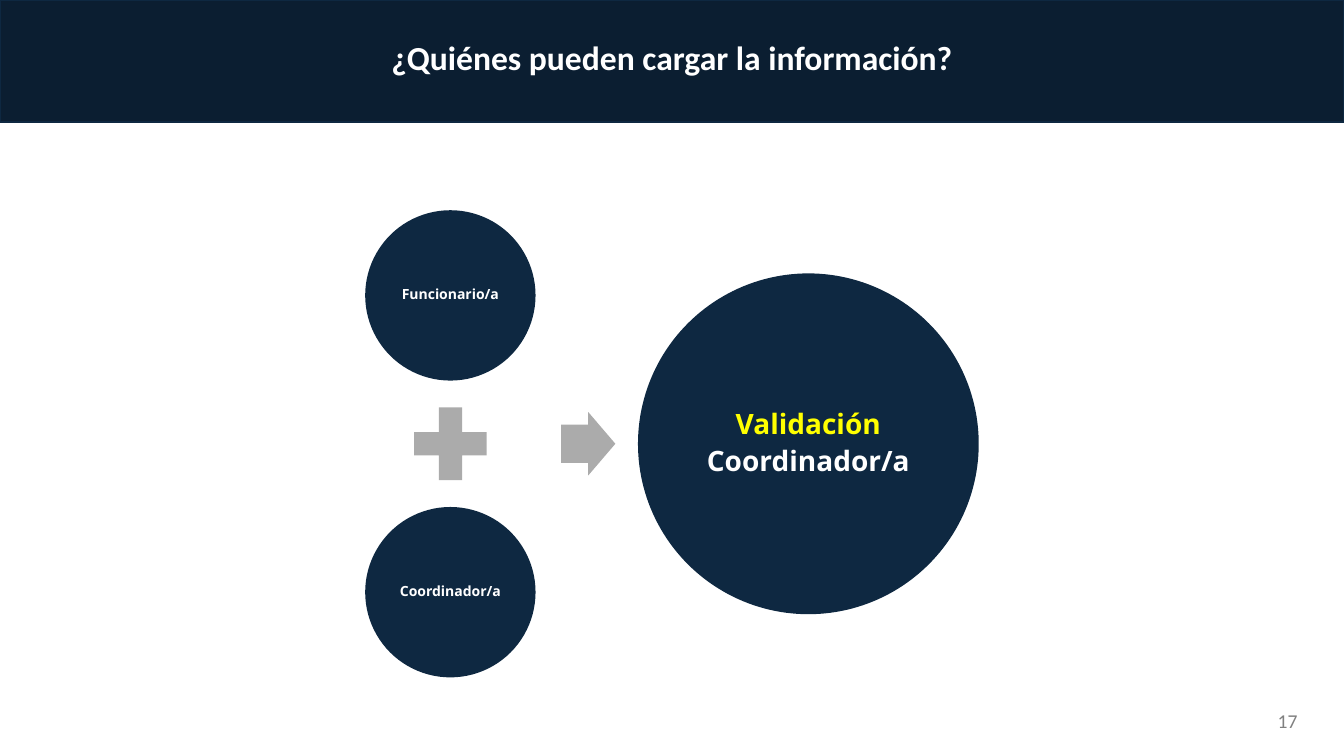
from pptx import Presentation
from pptx.dml.color import RGBColor
from pptx.enum.shapes import MSO_SHAPE
from pptx.enum.text import MSO_ANCHOR, PP_ALIGN
from pptx.util import Pt

NAVY = RGBColor(0x0E, 0x28, 0x41)
DARK_NAVY = RGBColor(0x0B, 0x1E, 0x31)
SILVER = RGBColor(0xAB, 0xAB, 0xAB)
GRAY = RGBColor(0x80, 0x80, 0x80)
YELLOW = RGBColor(0xFF, 0xFF, 0x00)
WHITE = RGBColor(0xFF, 0xFF, 0xFF)

PAGE_WIDTH, PAGE_HEIGHT = 960, 540
PEOPLE_X = 321.7
MIDDLE_Y = 317


class SlideBuilder:
    heading_font = "Calibri"
    diagram_font = "Open Sans"

    def __init__(self, page):
        self.page = page

    def shape(self, kind, left, top, width, height, fill, line=None):
        shape = self.page.shapes.add_shape(
            kind, Pt(left), Pt(top), Pt(width), Pt(height))
        shape.shadow.inherit = False
        shape.fill.solid()
        shape.fill.fore_color.rgb = fill
        if line is None:
            shape.line.fill.background()
        else:
            shape.line.color.rgb = line
            shape.line.width = Pt(1.5)
        return shape

    def centered(self, kind, x, y, width, height, fill):
        """Place a shape by its centre point."""
        return self.shape(kind, x - width / 2, y - height / 2, width, height, fill)

    def add_span(self, para, text, font, size, color, bold=False):
        span = para.add_run()
        span.text = text
        span.font.name = font
        span.font.size = Pt(size)
        span.font.bold = bold
        span.font.color.rgb = color

    def circle(self, x, y, diameter, lines, size, inset):
        """Draw a circle with one paragraph per (text, colour) pair."""
        circle = self.centered(MSO_SHAPE.OVAL, x, y, diameter, diameter, NAVY)
        frame = circle.text_frame
        frame.word_wrap = True
        frame.vertical_anchor = MSO_ANCHOR.MIDDLE
        frame.margin_left = frame.margin_right = Pt(inset)
        frame.margin_top = frame.margin_bottom = Pt(inset)
        for index, (text, color) in enumerate(lines):
            para = frame.add_paragraph() if index else frame.paragraphs[0]
            para.alignment = PP_ALIGN.CENTER
            para.line_spacing = 0.9
            para.space_after = Pt(size / 4)
            self.add_span(para, text, self.diagram_font, size, color, bold=True)

    def label(self, left, top, width, height, text, size, color, align,
              anchor=MSO_ANCHOR.TOP, bold=False):
        box = self.page.shapes.add_textbox(
            Pt(left), Pt(top), Pt(width), Pt(height))
        frame = box.text_frame
        frame.word_wrap = True
        frame.vertical_anchor = anchor
        para = frame.paragraphs[0]
        para.alignment = align
        self.add_span(para, text, self.heading_font, size, color, bold)


def main():
    deck = Presentation()
    deck.slide_width, deck.slide_height = Pt(PAGE_WIDTH), Pt(PAGE_HEIGHT)
    page = deck.slides.add_slide(deck.slide_layouts[6])
    builder = SlideBuilder(page)

    builder.shape(MSO_SHAPE.RECTANGLE, 0, 0, PAGE_WIDTH, 87.2, DARK_NAVY, NAVY)

    for person, offset in (("Funcionario/a", -106), ("Coordinador/a", 106)):
        builder.circle(PEOPLE_X, MIDDLE_Y + offset, 121.7,
                       [(person, WHITE)], size=10, inset=0.9)
    builder.centered(MSO_SHAPE.MATH_PLUS, PEOPLE_X, MIDDLE_Y, 70.6, 70.6, SILVER)
    arrow = builder.centered(
        MSO_SHAPE.RIGHT_ARROW, 420.2, MIDDLE_Y, 38.7, 45.3, SILVER)
    arrow.adjustments[0] = 0.6
    arrow.adjustments[1] = 0.5
    builder.circle(577.4, MIDDLE_Y, 243.4,
                   [("Validación", YELLOW), ("Coordinador/a", WHITE)],
                   size=20, inset=2)

    builder.label(42.5, 23, 875, 59, "¿Quiénes pueden cargar la información?",
                  24, WHITE, PP_ALIGN.CENTER, bold=True)
    builder.label(710, 500.5, 224, 28.8, "17", 14, GRAY, PP_ALIGN.RIGHT,
                  anchor=MSO_ANCHOR.MIDDLE)

    deck.save("out.pptx")


if __name__ == "__main__":
    main()
